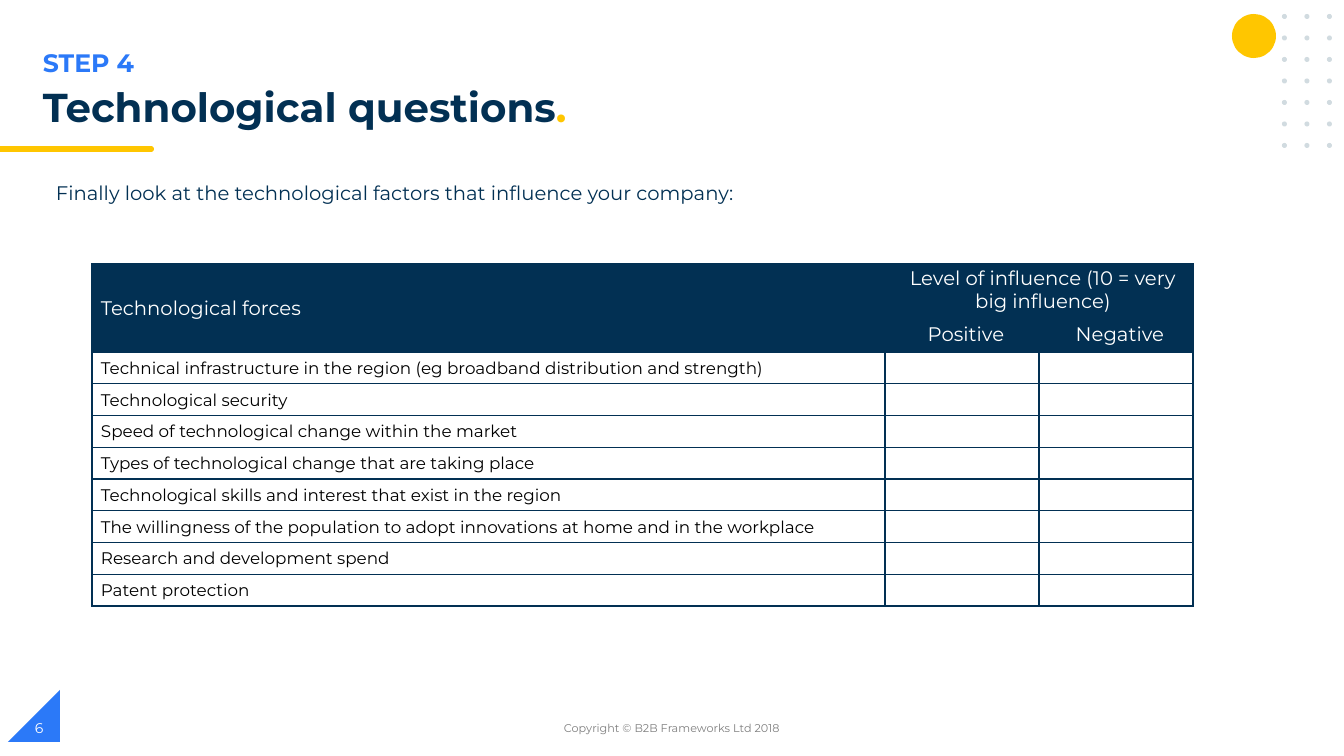
from lxml import etree
from pptx import Presentation
from pptx import util as u
from pptx.dml.color import RGBColor
from pptx.enum import shapes, text
from pptx.oxml import ns

PX = 914400 / 100.8
FONT = "Montserrat"
NAVY, BLUE, YELLOW = "023053", "2B79F8", "FFC600"
WHITE, BLACK, GREY, DOT = "FFFFFF", "000000", "7F7F7F", "D1DBE0"
OVAL = shapes.MSO_SHAPE.OVAL
MIDDLE = text.MSO_ANCHOR.MIDDLE
CENTER = text.PP_ALIGN.CENTER

FORCES = [
    "Technical infrastructure in the region (eg broadband distribution and strength)",
    "Technological security",
    "Speed of technological change within the market",
    "Types of technological change that are taking place",
    "Technological skills and interest that exist in the region",
    "The willingness of the population to adopt innovations at home and in the workplace",
    "Research and development spend",
    "Patent protection",
]


def px(n):
    """Turn pixels into EMU."""
    return u.Emu(round(n * PX))


def rgb(value):
    """Turn a hex string into a colour."""
    return RGBColor.from_string(value)


def style(r, size, color, bold=False):
    """Set the font of a run."""
    r.font.name = FONT
    r.font.size = u.Pt(size)
    r.font.bold = bold
    r.font.color.rgb = rgb(color)


def add_shape(s, kind, box, color):
    """Add a plain filled shape."""
    sp = s.shapes.add_shape(kind, *map(px, box))
    sp.shadow.inherit = False
    sp.fill.solid()
    sp.fill.fore_color.rgb = rgb(color)
    sp.line.fill.background()
    return sp


def add_text(s, box, words, size, color, bold=False, anchor=text.MSO_ANCHOR.TOP, align=None):
    """Add a one-paragraph text box and return its paragraph."""
    tf = s.shapes.add_textbox(*map(px, box)).text_frame
    tf.word_wrap = True
    tf.vertical_anchor = anchor
    tf.text = words
    p = tf.paragraphs[0]
    p.alignment = align
    style(p.runs[0], size, color, bold)
    return p


def add_corner(s, left, top, width, height):
    """Draw the yellow disc and the grid of dots."""
    disc, dot, cols, rows = 44, 5, 3, 7
    add_shape(s, OVAL, (left, top, disc, disc), YELLOW)
    grid = left + disc + 6
    dx = (left + width - grid - dot) / (cols - 1)
    dy = (height - dot) / (rows - 1)
    for i in range(rows):
        for j in range(cols):
            add_shape(s, OVAL, (grid + j * dx, top + i * dy, dot, dot), DOT)


def add_heading(s, left, top, width, height):
    """Write the step and the title above a yellow rule."""
    add_text(s, (left, top, width, 40), "STEP 4", 18, BLUE, True)
    p = add_text(s, (left, top + 41, width, 56), "Technological questions", 28.8, NAVY, True)
    p.line_spacing = 0.9
    r = p.add_run()
    r.text = "."
    style(r, 28.8, YELLOW, True)
    rule = top + height - 6
    add_shape(s, shapes.MSO_SHAPE.FLOWCHART_TERMINATOR, (135, rule, 19, 6), YELLOW)
    add_shape(s, shapes.MSO_SHAPE.RECTANGLE, (0, rule, 142, 6), YELLOW)


def add_borders(cell):
    """Draw a navy line on each side of a cell."""
    tcPr = cell._tc.get_or_add_tcPr()
    for i, side in enumerate(("lnL", "lnR", "lnT", "lnB")):
        ln = etree.Element(ns.qn("a:" + side), w=str(u.Pt(1)))
        fill = etree.SubElement(ln, ns.qn("a:solidFill"))
        etree.SubElement(fill, ns.qn("a:srgbClr"), val=NAVY)
        tcPr.insert(i, ln)


def fill_cell(cell, words, size, color, align=None):
    """Write the words of a cell."""
    cell.text = words
    p = cell.text_frame.paragraphs[0]
    p.alignment = align
    style(p.runs[0], size, color)


def add_forces(s, left, top, width, height):
    """Build the table of forces with a two-row heading."""
    heads, score = (51, 37), 154
    body = (height - sum(heads)) / len(FORCES)
    heights = [*heads, *[body] * len(FORCES)]
    frame = s.shapes.add_table(len(heights), 3, *map(px, (left, top, width, height)))
    table = frame.table
    table.first_row = table.horz_banding = False
    for col, w in zip(table.columns, (width - 2 * score, score, score)):
        col.width = px(w)
    for i, (row, h) in enumerate(zip(table.rows, heights)):
        row.height = px(h)
        for cell in row.cells:
            cell.margin_left = px(9)
            cell.margin_right = cell.margin_top = px(1)
            cell.margin_bottom = 0
            cell.vertical_anchor = MIDDLE
            cell.fill.solid()
            cell.fill.fore_color.rgb = rgb(NAVY if i < len(heads) else WHITE)
            add_borders(cell)
    table.cell(0, 0).merge(table.cell(1, 0))
    table.cell(0, 1).merge(table.cell(0, 2))
    fill_cell(table.cell(0, 0), "Technological forces", 14, WHITE)
    fill_cell(table.cell(0, 1), "Level of influence (10 = very big influence)", 14, WHITE, CENTER)
    fill_cell(table.cell(1, 1), "Positive", 14, WHITE, CENTER)
    fill_cell(table.cell(1, 2), "Negative", 14, WHITE, CENTER)
    for i, force in enumerate(FORCES, len(heads)):
        fill_cell(table.cell(i, 0), force, 12, BLACK)


def add_footer(s, left, top, width, height):
    """Draw the page corner, the page number and the copyright line."""
    sp = add_shape(s, shapes.MSO_SHAPE.RIGHT_TRIANGLE, (left, top, height, height), BLUE)
    sp._element.spPr.xfrm.set("flipH", "1")
    line = top + 18
    add_text(s, (left + (width - 454) / 2, line, 454, 40),
             "Copyright © B2B Frameworks Ltd 2018", 8, GREY, anchor=MIDDLE, align=CENTER)
    add_text(s, (left + 17, line, 302, 40), "6", 10, WHITE, anchor=MIDDLE)


def main():
    """Build and save the slide."""
    prs = Presentation()
    prs.slide_width, prs.slide_height = px(1344), px(756)
    s = prs.slides.add_slide(prs.slide_layouts[6])
    add_corner(s, 1232, 14, 100, 134)
    add_heading(s, 33, 42, 724, 110)
    add_text(s, (46, 176, 1132, 34),
             "Finally look at the technological factors that influence your company:", 14, NAVY)
    add_forces(s, 92, 264, 1101, 342)
    add_footer(s, 8, 690, 1328, 52)
    prs.save("out.pptx")


if __name__ == "__main__":
    main()
